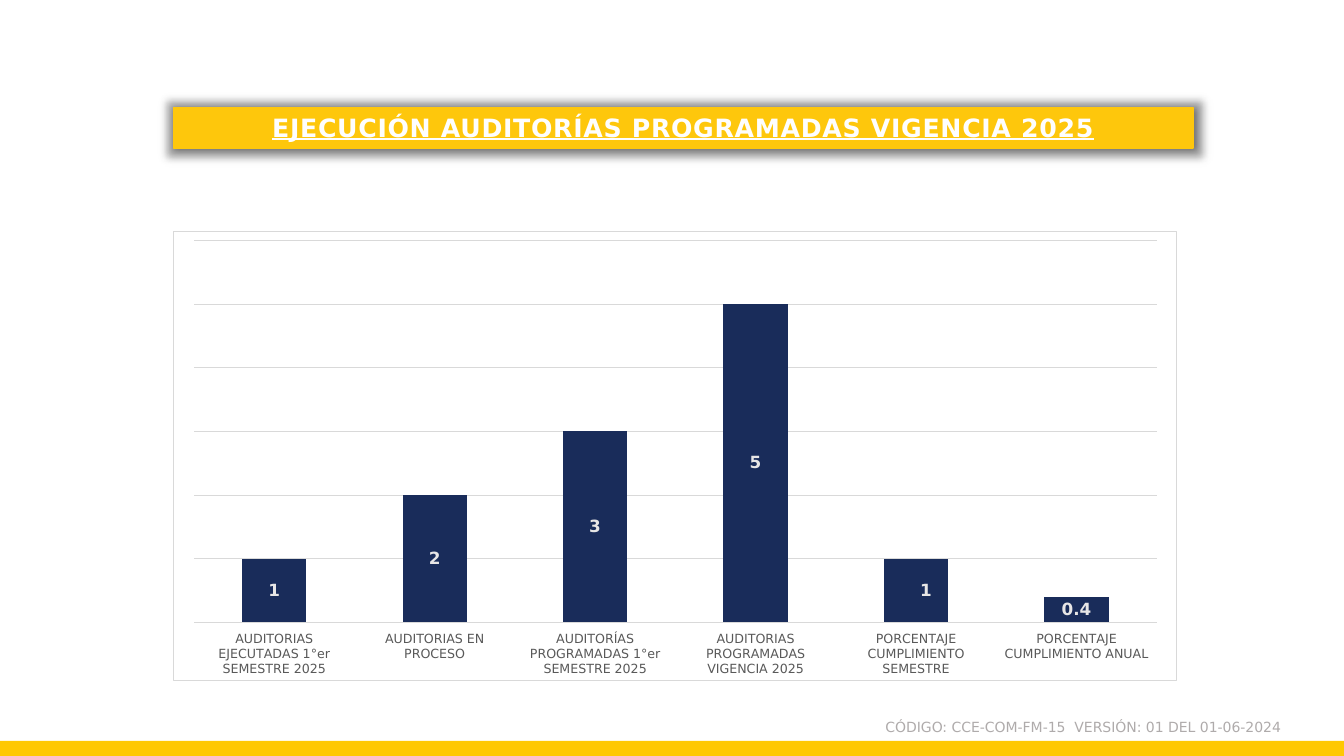
from lxml import etree
from pptx import Presentation
from pptx.chart.data import CategoryChartData
from pptx.dml.color import RGBColor
from pptx.enum.chart import XL_CHART_TYPE, XL_LABEL_POSITION, XL_TICK_LABEL_POSITION, XL_TICK_MARK
from pptx.enum.shapes import MSO_SHAPE
from pptx.enum.text import MSO_ANCHOR, MSO_AUTO_SIZE, PP_ALIGN
from pptx.oxml import parse_xml
from pptx.oxml.ns import nsdecls, qn
from pptx.util import Cm, Pt

STACKED = XL_CHART_TYPE.COLUMN_STACKED
LABEL_CENTER = XL_LABEL_POSITION.CENTER
LABELS_LOW = XL_TICK_LABEL_POSITION.LOW
NO_TICK = XL_TICK_MARK.NONE
RECT = MSO_SHAPE.RECTANGLE
MIDDLE = MSO_ANCHOR.MIDDLE
NO_FIT = MSO_AUTO_SIZE.NONE
CENTER, RIGHT = PP_ALIGN.CENTER, PP_ALIGN.RIGHT

FONT = "DejaVu Sans"
COLORS = {
    "bar": "FFC802",
    "banner": "FEC70C",
    "banner_text": "FEFEFE",
    "code": "AFABAB",
    "column": "192C5A",
    "value": "E7E6E6",
    "category": "595959",
    "grid": "D9D9D9",
    "white": "FFFFFF",
    "black": "000000",
}
AUDITS = [
    ("AUDITORIAS EJECUTADAS 1°er SEMESTRE 2025", 1),
    ("AUDITORIAS EN PROCESO", 2),
    ("AUDITORÍAS PROGRAMADAS 1°er SEMESTRE 2025", 3),
    ("AUDITORIAS PROGRAMADAS VIGENCIA 2025", 5),
    ("PORCENTAJE CUMPLIMIENTO SEMESTRE", 1),
    ("PORCENTAJE CUMPLIMIENTO ANUAL", 0.4),
]


def rgb(name):
    return RGBColor.from_string(COLORS[name])


def set_font(font, size, color, bold=False):
    font.name = FONT
    font.size = Pt(size)
    font.bold = bold
    font.color.rgb = rgb(color)


def set_fill(sp, color):
    sp.fill.solid()
    sp.fill.fore_color.rgb = rgb(color)


def add_text(tf, text, size, color, align, bold=False):
    tf.word_wrap = True
    tf.auto_size = NO_FIT
    tf.vertical_anchor = MIDDLE
    p = tf.paragraphs[0]
    p.alignment = align
    r = p.add_run()
    r.text = text
    set_font(r.font, size, color, bold)
    return r


def add_banner(s, text):
    sp = s.shapes.title
    sp.left, sp.top, sp.width, sp.height = Cm(4.37), Cm(2.71), Cm(25.7), Cm(1.02)
    set_fill(sp, "banner")
    sp.line.color.rgb = rgb("banner")
    sp.line.width = Pt(1)
    r = add_text(sp.text_frame, text, 18, "banner_text", CENTER, True)
    r.font.underline = True
    r.font._element.set("spc", "50")
    black = COLORS["black"]
    sp._element.spPr.append(parse_xml(
        f'<a:effectLst {nsdecls("a")}>'
        f'<a:glow rad="139700"><a:srgbClr val="{black}"><a:alpha val="27000"/></a:srgbClr></a:glow>'
        f'<a:outerShdw blurRad="63500" dist="12700" dir="2700000">'
        f'<a:srgbClr val="{black}"><a:alpha val="40000"/></a:srgbClr></a:outerShdw>'
        f'</a:effectLst>'))


def add_footer(s, text):
    tb = s.shapes.add_textbox(Cm(13.18), Cm(17.98), Cm(19.35), Cm(0.69))
    add_text(tb.text_frame, text, 10, "code", RIGHT)
    sp = s.shapes.add_shape(RECT, 0, Cm(18.67), Cm(33.87), Cm(0.38))
    set_fill(sp, "bar")
    sp.line.fill.background()
    sp.shadow.inherit = False


def manual_layout(**places):
    layout = parse_xml(f'<c:layout {nsdecls("c")}><c:manualLayout/></c:layout>')
    for tag, value in places.items():
        etree.SubElement(layout[0], qn(f"c:{tag}")).set("val", str(value))
    return layout


def frame_chart(chart):
    space = chart._chartSpace
    space.find(qn("c:chart")).addnext(parse_xml(
        f'<c:spPr {nsdecls("c", "a")}>'
        f'<a:solidFill><a:srgbClr val="{COLORS["white"]}"/></a:solidFill>'
        f'<a:ln w="9525"><a:solidFill><a:srgbClr val="{COLORS["grid"]}"/></a:solidFill></a:ln>'
        f'</c:spPr>'))
    area = space.find(f'.//{qn("c:plotArea")}')
    for old in area.findall(qn("c:layout")):
        area.remove(old)
    area.insert(0, manual_layout(layoutTarget="inner", xMode="edge", yMode="edge",
                                 x=0.02, y=0.02, w=0.96, h=0.85))


def format_axes(chart):
    cat = chart.category_axis
    cat.major_tick_mark = cat.minor_tick_mark = NO_TICK
    cat.tick_label_position = LABELS_LOW
    cat.format.line.fill.background()
    set_font(cat.tick_labels.font, 9, "category")
    val = chart.value_axis
    val.visible = False
    val.minimum_scale, val.maximum_scale, val.major_unit = 0, 6, 1
    val.has_major_gridlines = True
    grid = val.major_gridlines.format.line
    grid.color.rgb = rgb("grid")
    grid.width = Pt(0.75)


def format_columns(plot):
    plot.gap_width, plot.overlap = 150, 100
    plot.vary_by_categories = False
    series = plot.series[0]
    set_fill(series.format, "column")
    labels = series.data_labels
    labels.show_value = True
    labels.position = LABEL_CENTER
    set_font(labels.font, 12, "value", True)
    set_font(series.points[4].data_label.font, 12, "value", True)
    label = series._element.find(f'.//{qn("c:dLbl")}')
    label.find(qn("c:idx")).addnext(manual_layout(x=0.01, y=0))


def add_audit_chart(s):
    data = CategoryChartData()
    data.categories = [name for name, _ in AUDITS]
    data.add_series("Series 1", [value for _, value in AUDITS])
    chart = s.shapes.add_chart(STACKED, Cm(4.37), Cm(5.82), Cm(25.3), Cm(11.35), data).chart
    chart.has_title = False
    chart.has_legend = False
    set_font(chart.font, 10, "black")
    format_axes(chart)
    format_columns(chart.plots[0])
    frame_chart(chart)


def main():
    prs = Presentation()
    prs.slide_width, prs.slide_height = Cm(33.87), Cm(19.05)
    s = prs.slides.add_slide(prs.slide_layouts[5])
    add_footer(s, "CÓDIGO: CCE-COM-FM-15\u00a0 VERSIÓN: 01 DEL 01-06-2024".replace("\u00a0", " "))
    add_audit_chart(s)
    add_banner(s, "EJECUCIÓN AUDITORÍAS PROGRAMADAS VIGENCIA 2025")
    prs.save("out.pptx")


if __name__ == "__main__":
    main()
